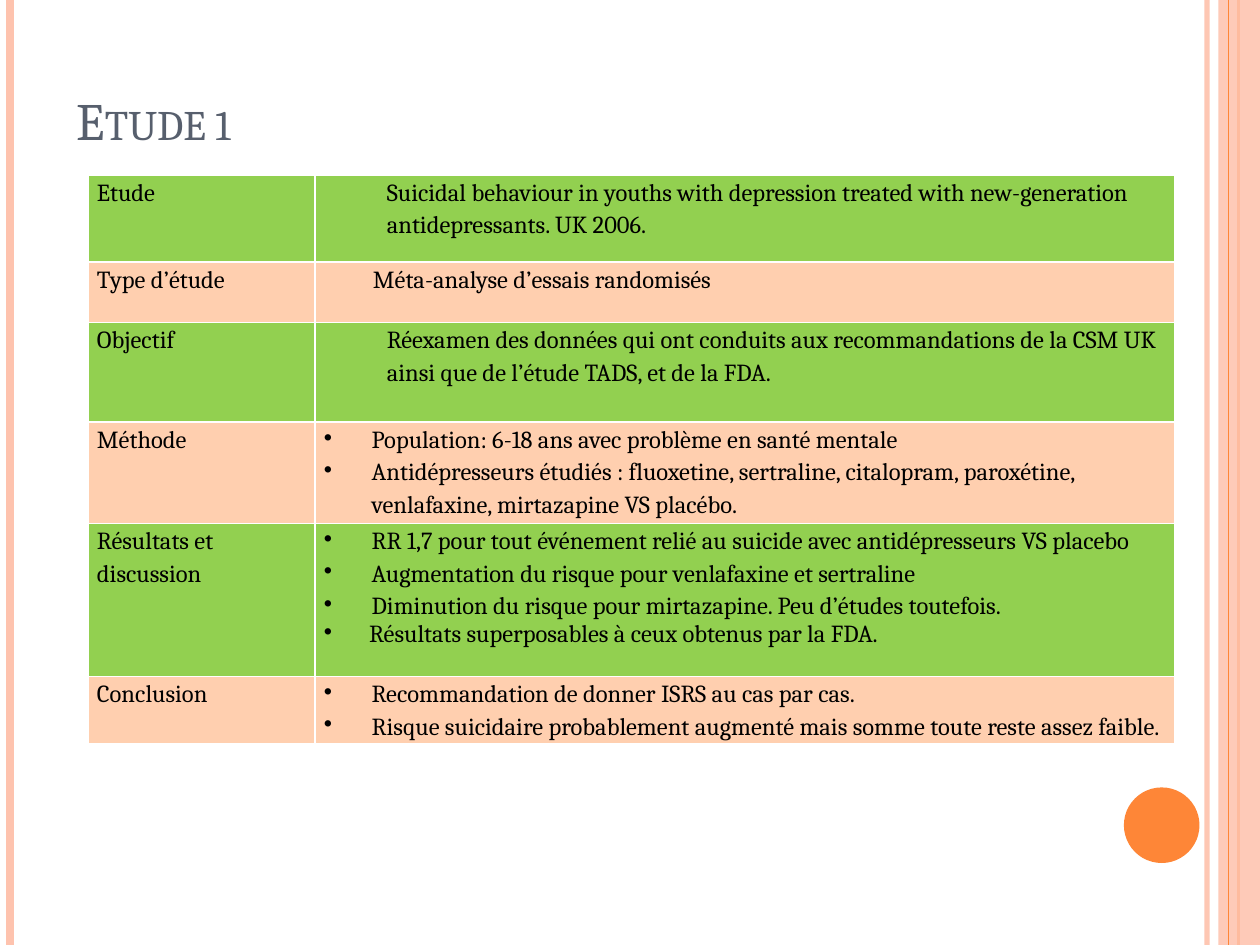
"""Build a slide that summarises one study in a two-column table."""
from dataclasses import dataclass

from lxml import etree
from pptx import Presentation
from pptx.dml.color import RGBColor
from pptx.enum.shapes import MSO_CONNECTOR, MSO_SHAPE
from pptx.enum.text import MSO_ANCHOR
from pptx.oxml.ns import qn
from pptx.util import Inches, Pt

STRAIGHT = MSO_CONNECTOR.STRAIGHT
RECTANGLE = MSO_SHAPE.RECTANGLE
OVAL = MSO_SHAPE.OVAL
BOTTOM = MSO_ANCHOR.BOTTOM
WIDTH = Inches(10)
HEIGHT = Inches(7.5)


@dataclass(frozen=True)
class Theme:
    """Colours, font and type sizes of the slide."""
    font: str = "Cambria"
    title_size: float = 30
    body_size: float = 14
    title: str = "575F6D"
    body: str = "000000"
    accent: str = "FE8637"
    pale: str = "FEC3AE"
    border: str = "FFFFFF"
    bands: tuple[str, str] = ("92D050", "FFCFAF")


THEME = Theme()


@dataclass(frozen=True)
class Stripe:
    """A full-height vertical line at a percentage of the width."""
    left: float
    color: str
    weight: float
    opacity: int = 100


@dataclass(frozen=True)
class Entry:
    """A table paragraph with its indent in inches."""
    text: str
    indent: float = 0
    bullet: bool = False
    spacing: float = 1.15


@dataclass(frozen=True)
class StudyRow:
    """A table row with its height as a percentage of the slide."""
    label: str
    height: float
    entries: tuple[Entry, ...]


def point(text: str, indent: float = 0.38, spacing: float = 1.15) -> Entry:
    """Return a bulleted entry."""
    return Entry(text, indent, True, spacing)


OUTER_STRIPES = (
    Stripe(95.8, THEME.pale, 3, 93),
    Stripe(0.8, THEME.pale, 4.5),
    Stripe(98.3, THEME.accent, 1.5),
)
INNER_STRIPE = Stripe(97.5, THEME.accent, 0.75)
TABLE_LEFT, TABLE_TOP = 7, 18.53
COLUMNS = (18, 68.2)
ROWS = (
    StudyRow("Etude", 9.2, (Entry(
        "Suicidal behaviour in youths with depression treated with "
        "new-generation antidepressants. UK 2006.", 0.5),)),
    StudyRow("Type d’étude", 6.4, (
        Entry("Méta-analyse d’essais randomisés", 0.39),)),
    StudyRow("Objectif", 10.53, (Entry(
        "Réexamen des données qui ont conduits aux recommandations de la "
        "CSM UK ainsi que de l’étude TADS, et de la FDA.", 0.5),)),
    StudyRow("Méthode", 10.27, (
        point("Population: 6-18 ans avec problème en santé mentale"),
        point("Antidépresseurs étudiés : fluoxetine, sertraline, citalopram, "
              "paroxétine, venlafaxine, mirtazapine VS placébo."))),
    StudyRow("Résultats et discussion", 16.2, (
        point("RR 1,7 pour tout événement relié au suicide avec "
              "antidépresseurs VS placebo"),
        point("Augmentation du risque pour venlafaxine et sertraline"),
        point("Diminution du risque pour mirtazapine. "
              "Peu d’études toutefois."),
        point("Résultats superposables à ceux obtenus par la FDA.", 0.36, 1))),
    StudyRow("Conclusion", 6.9, (
        point("Recommandation de donner ISRS au cas par cas."),
        point("Risque suicidaire probablement augmenté mais somme toute "
              "reste assez faible."))),
)


def across(percent: float) -> int:
    """Turn a percentage of the width into a length."""
    return round(WIDTH * percent / 100)


def down(percent: float) -> int:
    """Turn a percentage of the height into a length."""
    return round(HEIGHT * percent / 100)


def set_all(target: object, values: dict[str, object]) -> None:
    """Set several attributes on one object."""
    for name, value in values.items():
        setattr(target, name, value)


def add_child(parent, tag: str, **attributes: str):
    """Append an XML child element and return it."""
    return etree.SubElement(parent, qn(tag), attributes)


def set_opacity(shape, opacity: int) -> None:
    """Make the first colour of a shape translucent."""
    color = next(shape._element.spPr.iter(qn("a:srgbClr")))
    add_child(color, "a:alpha", val=str(opacity * 1000))


def add_stripe(page, stripe: Stripe) -> None:
    """Draw a vertical stripe without a shadow."""
    x = across(stripe.left)
    line = page.shapes.add_connector(STRAIGHT, x, 0, x, HEIGHT)
    line.line.color.rgb = RGBColor.from_string(stripe.color)
    line.line.width = Pt(stripe.weight)
    if stripe.opacity < 100:
        set_opacity(line, stripe.opacity)
    add_child(line._element.spPr, "a:effectLst")


def add_block(page, kind, left: float, top: float, width: float,
              height: float, color: str):
    """Draw a plain filled shape and return it."""
    block = page.shapes.add_shape(
        kind, across(left), down(top), across(width), down(height))
    block.shadow.inherit = False
    block.fill.solid()
    block.fill.fore_color.rgb = RGBColor.from_string(color)
    block.line.fill.background()
    return block


def write(para, text: str, size: float, color: str):
    """Add a formatted span to a paragraph and return it."""
    span = para.add_run()
    span.text = text
    set_all(span.font, {"name": THEME.font, "size": Pt(size)})
    span.font.color.rgb = RGBColor.from_string(color)
    return span


def add_title(page, text: str) -> None:
    """Place the title in small capitals."""
    box = page.shapes.add_textbox(
        across(5.1), 0, across(81.7), down(16.67))
    set_all(box.text_frame, {"word_wrap": True, "vertical_anchor": BOTTOM})
    span = write(box.text_frame.paragraphs[0], text,
                 THEME.title_size, THEME.title)
    span.font._element.set("cap", "small")


def fill_cell(cell, entries: tuple[Entry, ...], color: str) -> None:
    """Write the entries into a cell with its fill and borders."""
    inset = Inches(0.07)
    set_all(cell, {"margin_left": inset, "margin_right": inset,
                   "margin_top": 0, "margin_bottom": 0})
    frame = cell.text_frame
    for index, entry in enumerate(entries):
        para = frame.add_paragraph() if index else frame.paragraphs[0]
        para.line_spacing = entry.spacing
        write(para, entry.text, THEME.body_size, THEME.body)
        layout = para._p.get_or_add_pPr()
        indent = Inches(entry.indent)
        layout.set("marL", str(indent))
        layout.set("indent", str(-indent if entry.bullet else 0))
        if entry.bullet:
            add_child(layout, "a:buChar", char="•")
    properties = cell._tc.get_or_add_tcPr()
    for side in "LRTB":
        border = add_child(properties, f"a:ln{side}", w=str(Pt(1)))
        add_child(add_child(border, "a:solidFill"), "a:srgbClr",
                  val=THEME.border)
    cell.fill.solid()
    cell.fill.fore_color.rgb = RGBColor.from_string(color)


def add_study_table(page) -> None:
    """Draw the study table with alternating row colours."""
    table = page.shapes.add_table(
        len(ROWS), len(COLUMNS), across(TABLE_LEFT), down(TABLE_TOP),
        across(sum(COLUMNS)), down(sum(row.height for row in ROWS))).table
    for column, share in zip(table.columns, COLUMNS):
        column.width = across(share)
    for index, row in enumerate(ROWS):
        table.rows[index].height = down(row.height)
        color = THEME.bands[index % len(THEME.bands)]
        fill_cell(table.cell(index, 0), (Entry(row.label),), color)
        fill_cell(table.cell(index, 1), row.entries, color)


def main() -> None:
    """Build and save the deck."""
    deck = Presentation()
    set_all(deck, {"slide_width": WIDTH, "slide_height": HEIGHT})
    page = deck.slides.add_slide(deck.slide_layouts[6])
    for stripe in OUTER_STRIPES:
        add_stripe(page, stripe)
    band = add_block(page, RECTANGLE, 96.7, 0, 3.3, 100, THEME.pale)
    set_opacity(band, 87)
    add_stripe(page, INNER_STRIPE)
    add_block(page, OVAL, 89.2, 83.33, 6, 8, THEME.accent)
    add_title(page, "Etude 1")
    add_study_table(page)
    deck.save("out.pptx")


if __name__ == "__main__":
    main()
